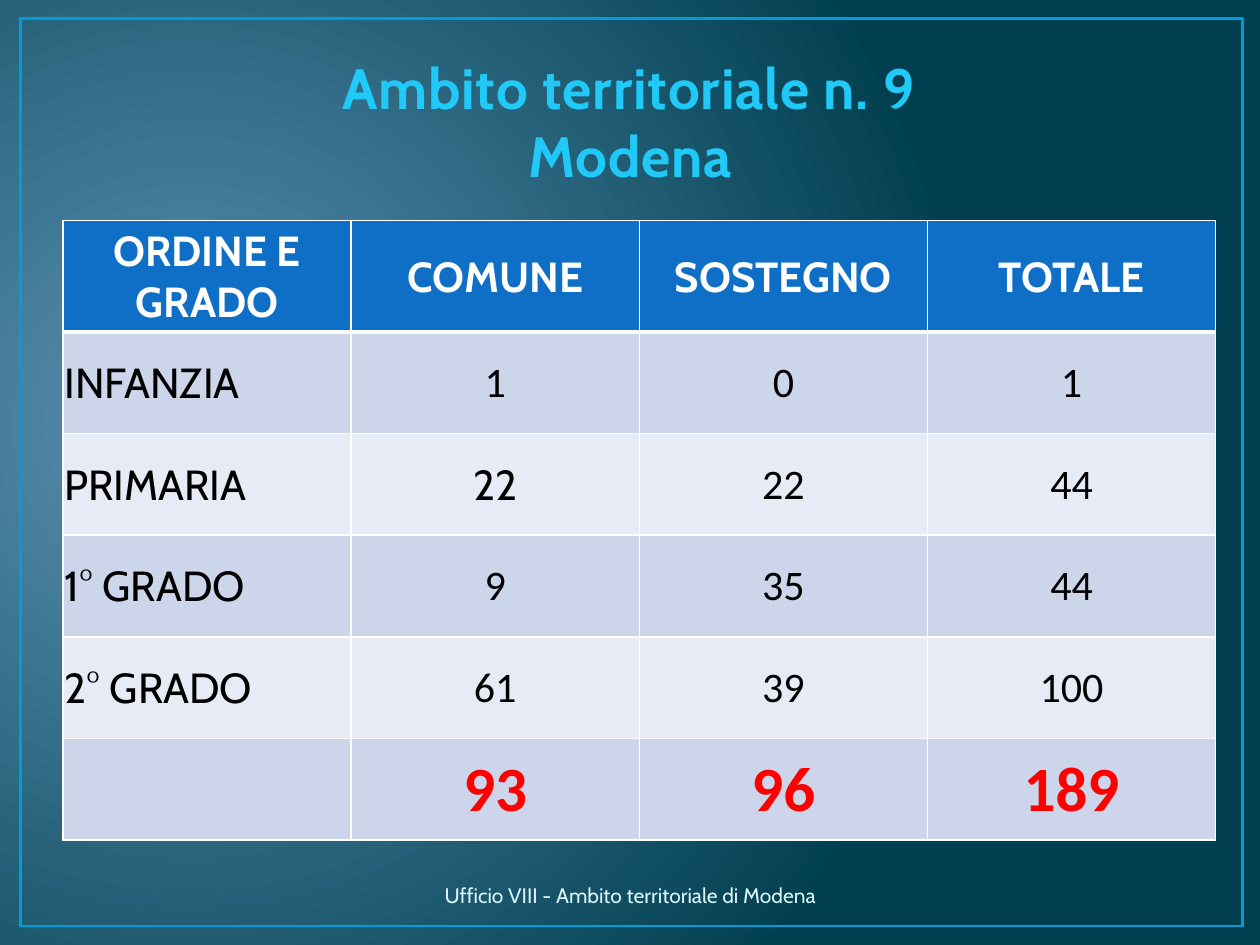
"""Build the slide with the posts per school level in territorial area 9, Modena."""
from lxml.etree import SubElement
from pptx import Presentation
from pptx.dml.color import RGBColor
from pptx.enum.shapes import MSO_SHAPE as Shape
from pptx.enum.text import MSO_ANCHOR as Anchor, PP_ALIGN as Align
from pptx.oxml import parse_xml
from pptx.oxml.ns import nsdecls, qn
from pptx.util import Cm, Pt

TITLE = "Ambito territoriale n. 9\vModena"
FOOTER = "Ufficio VIII - Ambito territoriale di Modena"
HEADINGS = ["ORDINE E GRADO", "COMUNE", "SOSTEGNO", "TOTALE"]
LEVELS = [
    ["INFANZIA", "1", "0", "1"],
    ["PRIMARIA", "22", "22", "44"],
    ["1° GRADO", "9", "35", "44"],
    ["2° GRADO", "61", "39", "100"],
]
TOTALS = ["", "93", "96", "189"]
ROWS = [HEADINGS, *LEVELS, TOTALS]
CABIN_NUMBERS = {(2, 1)}
BANDS = ["E7EBF5", "CCD5EA"]
GLOW = ["5C92B3", "003F50"]


def rgb(color):
    return RGBColor.from_string(color)


def write(frame, text, size, color, font="Cabin", bold=False, align=Align.CENTER):
    paragraph = frame.paragraphs[0]
    paragraph.text = text
    paragraph.alignment = align
    style = paragraph.font
    style.size, style.name, style.bold = Pt(size), font, bold
    style.color.rgb = rgb(color)
    return paragraph


def add_text(slide, box, text, size, color, anchor, bold=False):
    frame = slide.shapes.add_textbox(*map(Cm, box)).text_frame
    frame.word_wrap = True
    frame.vertical_anchor = anchor
    return write(frame, text, size, color, bold=bold)


def paint_background(slide):
    fill = slide.background.fill
    fill.gradient()
    for stop, color in zip(fill.gradient_stops, GLOW):
        stop.color.rgb = rgb(color)
    gradient = slide.element.find(".//" + qn("a:gradFill"))
    gradient.remove(gradient.find(qn("a:lin")))
    circle = SubElement(gradient, qn("a:path"), path="circle")
    SubElement(circle, qn("a:fillToRect"), l="15000", t="50000", r="85000", b="60000")


def set_borders(cell, bottom):
    widths = {"lnL": 1, "lnR": 1, "lnT": 1, "lnB": bottom}
    for place, (side, width) in enumerate(widths.items()):
        cell._tc.get_or_add_tcPr().insert(place, parse_xml(
            f'<a:{side} {nsdecls("a")} w="{Pt(width)}"><a:solidFill>'
            f'<a:srgbClr val="FFFFFF"/></a:solidFill></a:{side}>'))


def cell_style(row, column):
    if row == 0:
        return dict(size=24, color="FFFFFF", bold=True)
    if row == len(ROWS) - 1:
        return dict(size=36, color="FF0000", bold=True, font="Calibri")
    if column == 0:
        return dict(size=24, color="000000", align=Align.LEFT)
    font = "Cabin" if (row, column) in CABIN_NUMBERS else "Calibri"
    return dict(size=24, color="000000", font=font)


def add_posts_table(slide):
    posts = slide.shapes.add_table(
        len(ROWS), len(HEADINGS), Cm(1.27), Cm(4.45), Cm(23.24), Cm(12.49)).table
    for column in posts.columns:
        column.width = Cm(5.81)
    for r, values in enumerate(ROWS):
        posts.rows[r].height = Cm(2.05 if r else 2.24)
        for c, value in enumerate(values):
            cell = posts.cell(r, c)
            cell.margin_left = cell.margin_right = cell.margin_top = Cm(0.03)
            cell.margin_bottom = 0
            cell.vertical_anchor = Anchor.MIDDLE
            cell.fill.solid()
            cell.fill.fore_color.rgb = rgb(BANDS[r % 2] if r else "0F6FC6")
            set_borders(cell, bottom=1 if r else 3)
            write(cell.text_frame, value, **cell_style(r, c))


def main():
    deck = Presentation()
    deck.slide_width, deck.slide_height = Cm(25.4), Cm(19.05)
    slide = deck.slides.add_slide(deck.slide_layouts[6])
    paint_background(slide)

    border = slide.shapes.add_shape(
        Shape.RECTANGLE, *map(Cm, (0.41, 0.38, 24.64, 18.29)))
    border.shadow.inherit = False
    border.fill.background()
    border.line.color.rgb = rgb("009DD9")
    border.line.width = Pt(1.5)

    title = add_text(slide, (1.27, 0.76, 22.86, 3.18), TITLE, 32.4, "20C9F8",
                     Anchor.BOTTOM, bold=True)
    title.font._element.set("spc", "50")
    add_text(slide, (7.87, 17.53, 9.68, 1.02), FOOTER, 12, "DBF5F9", Anchor.MIDDLE)
    add_posts_table(slide)
    deck.save("out.pptx")


if __name__ == "__main__":
    main()
